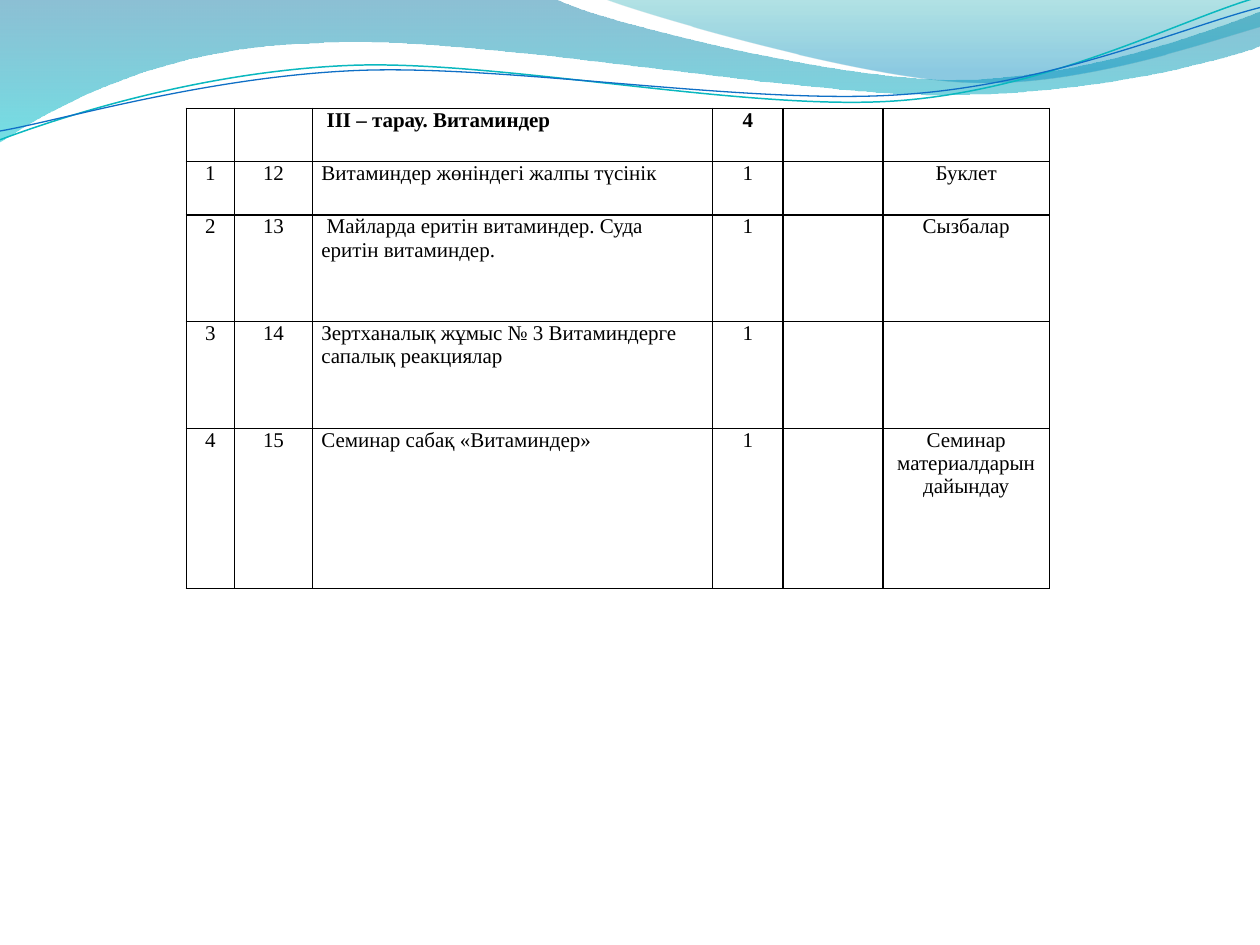
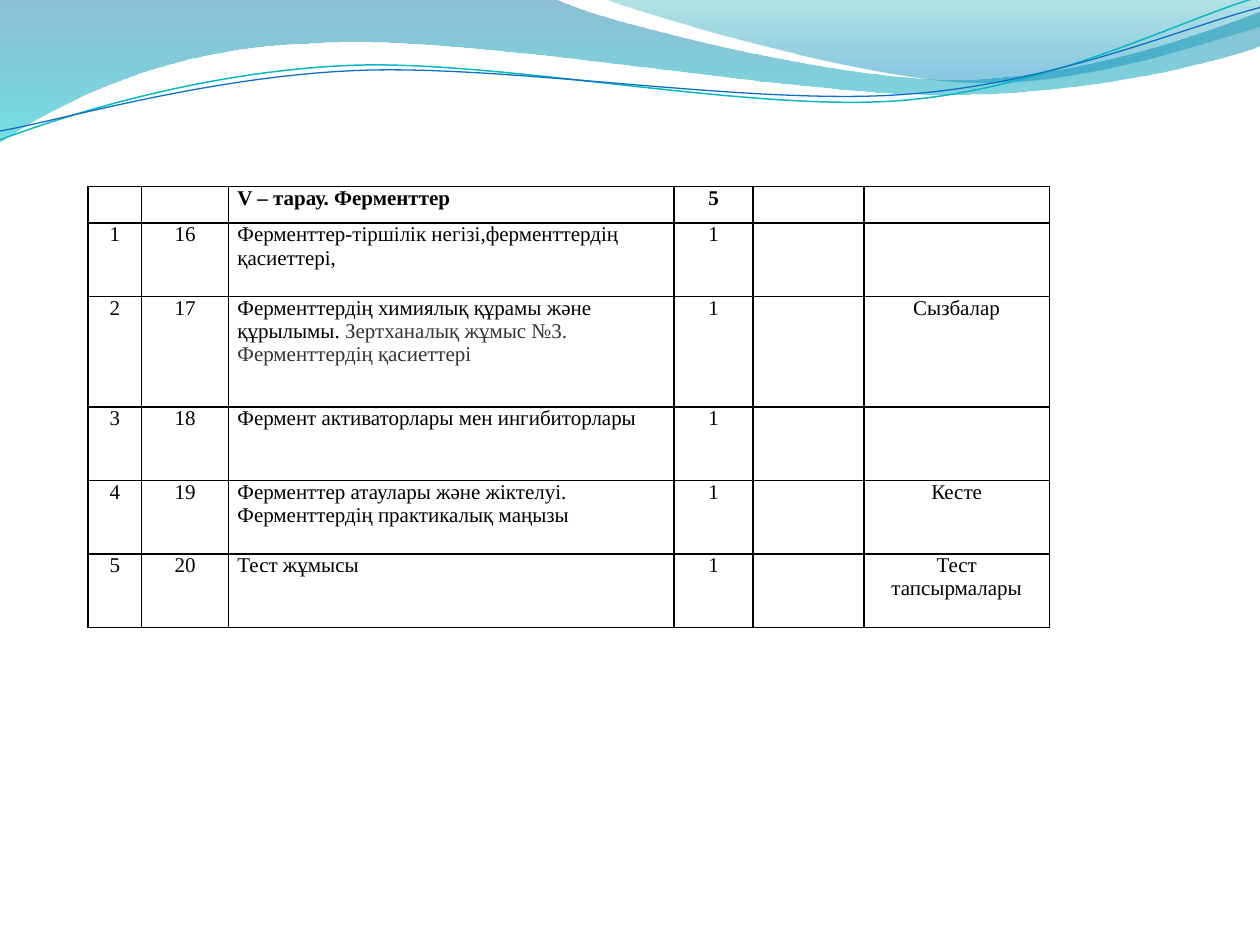
from lxml import etree
from pptx import Presentation
from pptx import util as u
from pptx.dml.color import RGBColor
from pptx.enum import text
from pptx.oxml.ns import qn

BLACK = RGBColor(0x00, 0x00, 0x00)
GRAY = RGBColor(0x33, 0x33, 0x33)
DEEP_BLUE = RGBColor(0x00, 0x74, 0xA1)
CYAN = RGBColor(0x00, 0xC6, 0xCF)
TEAL = RGBColor(0x00, 0xA1, 0xA9)
SKY_BLUE = RGBColor(0x00, 0x8B, 0xBF)
LINE_TEAL = RGBColor(0x0A, 0xB8, 0xBF)
LINE_BLUE = RGBColor(0x0F, 0x6F, 0xC6)

FONT = "Times New Roman"
FONT_SIZE = 12
COLUMN_SHARES = [0.38, 0.62, 3.17, 0.56, 0.79, 1.32]
TOPIC_COLUMN = 2

WIDE_WAVE = [
    [(0, 0)],
    [(4.4, -0.01)],
    [(4.76, 0.17), (6.64, 0.63), (7.58, 0.63)],
    [(8.53, 0.63), (9.58, 0.26), (10, 0.09)],
    [(10.01, 0.36)],
    [(9.83, 0.44), (8.7, 0.76), (7.46, 0.75)],
    [(6.22, 0.75), (3.82, 0.28), (2.57, 0.34)],
    [(1.29, 0.36), (0.46, 0.83), (-0.01, 1.13)],
    [(0, 0)],
]
RIGHT_WAVE = [
    [(4.79, -0.01)],
    [(5.09, 0.11), (6.82, 0.62), (7.69, 0.65)],
    [(8.56, 0.69), (9.61, 0.32), (10, 0.21)],
    [(10, 0)],
    [(4.79, -0.01)],
]
TEAL_LINE = [
    [(0, 1.11)],
    [(0.48, 0.93), (1.58, 0.57), (2.77, 0.52)],
    [(3.95, 0.47), (5.93, 0.89), (7.13, 0.8)],
    [(8.33, 0.71), (9.38, 0.15), (9.98, -0.02)],
]
BLUE_LINE = [
    [(0, 1.04)],
    [(0.47, 0.96), (1.64, 0.61), (2.83, 0.56)],
    [(4.03, 0.51), (5.97, 0.84), (7.17, 0.75)],
    [(8.36, 0.67), (9.41, 0.21), (10, 0.06)],
]

VITAMINS = [
    (1, "", "", " ІІІ – тарау. Витаминдер", "4", "", ""),
    (1, "1", "12", "Витаминдер жөніндегі жалпы түсінік", "1", "", "Буклет"),
    (2, "2", "13", " Майларда еритін витаминдер. Суда еритін витаминдер.",
     "1", "", "Сызбалар"),
    (2, "3", "14", "Зертханалық жұмыс № 3 Витаминдерге сапалық реакциялар",
     "1", "", ""),
    (3, "4", "15", "Семинар сабақ «Витаминдер»", "1", "",
     "Семинар материалдарын дайындау"),
]
ENZYMES = [
    (1, "", "", "V – тарау. Ферменттер", "5", "", ""),
    (2, "1", "16", "Ферменттер-тіршілік негізі,ферменттердің қасиеттері,",
     "1", "", ""),
    (3, "2", "17",
     [("Ферменттердің химиялық құрамы және құрылымы.", BLACK),
      (" Зертханалық жұмыс №3. Ферменттердің қасиеттері", GRAY)],
     "1", "", "Сызбалар"),
    (2, "3", "18", "Фермент активаторлары мен ингибиторлары", "1", "", ""),
    (2, "4", "19",
     "Ферменттер атаулары және жіктелуі. Ферменттердің практикалық маңызы",
     "1", "", "Кесте"),
    (2, "5", "20", "Тест жұмысы", "1", "", "Тест тапсырмалары"),
]


def add_curve(s, outline, close):
    start, *rest = [(u.Inches(x), u.Inches(y))
                    for segment in outline for x, y in segment]
    builder = s.shapes.build_freeform(*start)
    builder.add_line_segments(rest, close=close)
    sp = builder.convert_to_shape()
    sp.shadow.inherit = False
    steps = iter(list(sp._element.iter(qn("a:lnTo"))))
    for segment in outline[1:]:
        first, *others = [next(steps) for _ in segment]
        if others:
            first.tag = qn("a:cubicBezTo")
            for step in others:
                first.append(step[0])
                step.getparent().remove(step)
    return sp


def add_wave(s, outline, stops):
    sp = add_curve(s, outline, close=True)
    sp.line.fill.background()
    sp.fill.gradient()
    sp.fill.gradient_angle = 270
    for stop, (position, color, _) in zip(sp.fill.gradient_stops, stops):
        stop.position = position
        stop.color.rgb = color
    for node, (_, _, opacity) in zip(sp._element.iter(qn("a:srgbClr")), stops):
        etree.SubElement(node, qn("a:alpha"), val=str(opacity * 1000))
    return sp


def add_wave_line(s, outline, color, width):
    sp = add_curve(s, outline, close=False)
    sp.fill.background()
    sp.line.color.rgb = color
    sp.line.width = u.Pt(width)
    return sp


def add_master_header(prs, s):
    waves = [
        add_wave(s, WIDE_WAVE, [(0, DEEP_BLUE, 45), (1, CYAN, 55)]),
        add_wave(s, RIGHT_WAVE, [(0, TEAL, 30), (0.8, SKY_BLUE, 45)]),
        add_wave_line(s, TEAL_LINE, LINE_TEAL, 0.85),
        add_wave_line(s, BLUE_LINE, LINE_BLUE, 0.75),
    ]
    tree = prs.slide_master.shapes._spTree
    for number, sp in enumerate(waves, 101):
        sp._element.nvSpPr.cNvPr.set("id", str(number))
        tree.append(sp._element)


def write_text(tf, content, align=None, bold=False, size=FONT_SIZE):
    p = tf.paragraphs[0]
    p.alignment = align
    if not content:
        etree.SubElement(p._p, qn("a:endParaRPr"), sz=str(size * 100))
        return
    runs = [(content, BLACK)] if isinstance(content, str) else content
    for wording, color in runs:
        r = p.add_run()
        r.text = wording
        r.font.name = FONT
        r.font.size = u.Pt(size)
        r.font.bold = bold
        r.font.color.rgb = color


def style_cell(cell):
    cell.margin_left = cell.margin_right = u.Inches(0.07)
    cell.margin_top = cell.margin_bottom = 0
    tcPr = cell._tc.get_or_add_tcPr()
    for side in ("L", "R", "T", "B"):
        ln = etree.SubElement(tcPr, qn("a:ln" + side), w=str(u.Pt(1)))
        fill = etree.SubElement(ln, qn("a:solidFill"))
        etree.SubElement(fill, qn("a:srgbClr"), val=str(BLACK))
    cell.fill.background()


def add_lesson_table(s, lessons, left, top, width, height):
    frame = s.shapes.add_table(len(lessons), len(COLUMN_SHARES), u.Inches(left),
                               u.Inches(top), u.Inches(width), u.Inches(height))
    table = frame.table
    table.first_row = table.horz_banding = False
    for column, share in zip(table.columns, COLUMN_SHARES):
        column.width = u.Inches(width * share / sum(COLUMN_SHARES))
    total_lines = sum(lesson[0] for lesson in lessons)
    for i, (lines, *contents) in enumerate(lessons):
        table.rows[i].height = u.Inches(height * lines / total_lines)
        for j, content in enumerate(contents):
            cell = table.cell(i, j)
            style_cell(cell)
            align = None if j == TOPIC_COLUMN else text.PP_ALIGN.CENTER
            write_text(cell.text_frame, content, align=align, bold=i == 0)


def add_lesson_slide(prs, lessons, box):
    s = prs.slides.add_slide(prs.slide_layouts[6])
    add_lesson_table(s, lessons, *box)
    return s


def main():
    prs = Presentation()
    prs.slide_width = u.Inches(10)
    prs.slide_height = u.Inches(7.5)
    s = add_lesson_slide(prs, VITAMINS, (1.48, 0.86, 6.85, 3.81))
    add_lesson_slide(prs, ENZYMES, (0.7, 1.48, 7.63, 3.5))
    add_master_header(prs, s)
    prs.save("out.pptx")


if __name__ == "__main__":
    main()
